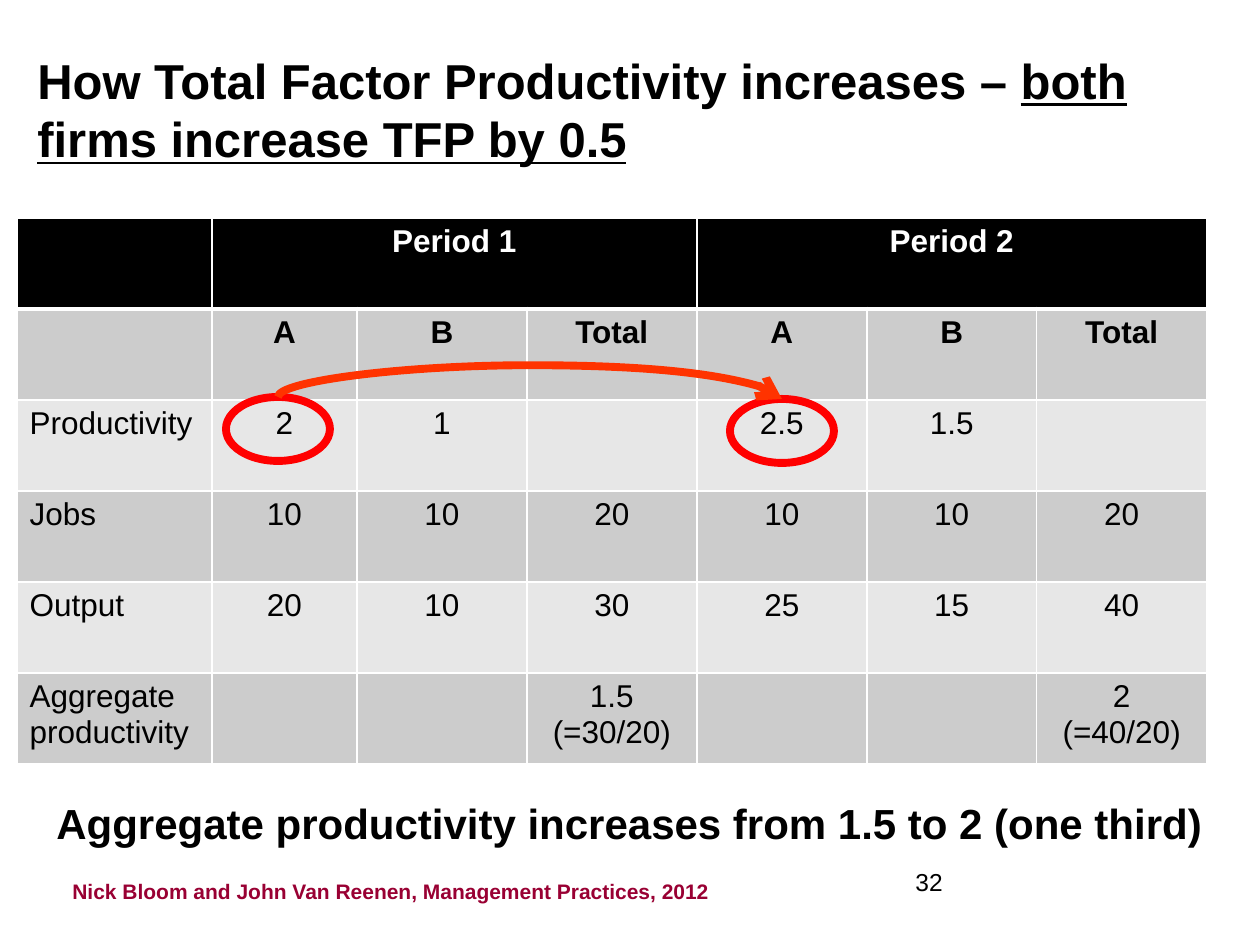
from dataclasses import dataclass

from lxml import etree
from pptx import Presentation
from pptx import util as u
from pptx.dml.color import RGBColor
from pptx.enum import shapes, text
from pptx.oxml.ns import qn

PX = u.Inches(1) // 126


@dataclass(frozen=True)
class Theme:
    font: str = "Arial"
    black: str = "000000"
    white: str = "FFFFFF"
    dark_band: str = "CCCCCC"
    light_band: str = "E7E7E7"
    footer: str = "990033"
    ring: str = "FF0000"
    arrow: str = "FF3300"
    title_size: int = 28
    conclusion_size: int = 24
    table_size: int = 18
    number_size: int = 14
    footer_size: int = 12
    accent_width: float = 4.5


THEME = Theme()

COLUMN_WIDTHS = [195, 145] + [170] * 5
ROW_HEIGHT = 91
ROWS = [
    ["", "Period 1", "", "", "Period 2", "", ""],
    ["", "A", "B", "Total", "A", "B", "Total"],
    ["Productivity", "2", "1", "", "2.5", "1.5", ""],
    ["Jobs", "10", "10", "20", "10", "10", "20"],
    ["Output", "20", "10", "30", "25", "15", "40"],
    ["Aggregate productivity", "", "", "1.5 (=30/20)", "", "", "2\n(=40/20)"],
]


def px(*lengths):
    return [u.Emu(length * PX) for length in lengths]


def rgb(color):
    return RGBColor.from_string(color)


def set_font(paragraph, size, color, bold=False):
    font = paragraph.font
    font.name, font.size, font.bold = THEME.font, u.Pt(size), bold
    font.color.rgb = rgb(color)


def add_text(slide, box, runs, size, color=THEME.black, bold=True, wrap=True):
    """Add one paragraph of (wording, underlined) runs; unwrapped boxes fit their text."""
    shape = slide.shapes.add_textbox(*px(*box))
    frame = shape.text_frame
    frame.word_wrap = wrap
    if not wrap:
        frame.auto_size = text.MSO_AUTO_SIZE.SHAPE_TO_FIT_TEXT
    paragraph = frame.paragraphs[0]
    set_font(paragraph, size, color, bold)
    for wording, underlined in runs:
        run = paragraph.add_run()
        run.text = wording
        if underlined:
            run.font.underline = True
    return shape


def set_borders(cell, bottom_width):
    properties = cell._tc.get_or_add_tcPr()
    widths = {"a:lnL": 1, "a:lnR": 1, "a:lnT": 1, "a:lnB": bottom_width}
    for index, (tag, width) in enumerate(widths.items()):
        line = etree.Element(qn(tag), w=str(u.Pt(width)))
        fill = etree.SubElement(line, qn("a:solidFill"))
        etree.SubElement(fill, qn("a:srgbClr"), val=THEME.white)
        properties.insert(index, line)


def style_cell(cell, row, column):
    header = row == 0
    band = THEME.light_band if row % 2 == 0 else THEME.dark_band
    cell.fill.solid()
    cell.fill.fore_color.rgb = rgb(THEME.black if header else band)
    set_borders(cell, 3 if header else 1)
    for paragraph in cell.text_frame.paragraphs:
        paragraph.alignment = text.PP_ALIGN.CENTER if column else text.PP_ALIGN.LEFT
        set_font(paragraph, THEME.table_size, THEME.white if header else THEME.black, row < 2)


def add_productivity_table(slide, left, top):
    size = px(left, top, sum(COLUMN_WIDTHS), ROW_HEIGHT * len(ROWS))
    table = slide.shapes.add_table(len(ROWS), len(COLUMN_WIDTHS), *size).table
    table.first_row = table.horz_banding = False
    for column, width in zip(table.columns, px(*COLUMN_WIDTHS)):
        column.width = width
    for row, values in enumerate(ROWS):
        table.rows[row].height = px(ROW_HEIGHT)[0]
        for column, value in enumerate(values):
            cell = table.cell(row, column)
            cell.text = value
            style_cell(cell, row, column)
    for first in (1, 4):
        table.cell(0, first).merge(table.cell(0, first + 2))


def add_ring(slide, left, top, width, height):
    ring = slide.shapes.add_shape(shapes.MSO_SHAPE.OVAL, *px(left, top, width, height))
    ring.shadow.inherit = False
    ring.fill.background()
    ring.line.color.rgb = rgb(THEME.ring)
    ring.line.width = u.Pt(THEME.accent_width)


def add_arched_arrow(slide, start, end, rise):
    """Draw a curve that rises from start and drops to end, which lies lower on the right."""
    (start_x, start_y), (end_x, end_y) = start, end
    span, drop = end_x - start_x, end_y - start_y
    left = (start_x + end_x - drop) // 2
    top = (start_y + end_y - span) // 2
    # The connector is laid out upright, then turned a quarter to the left.
    connector = slide.shapes.add_connector(
        shapes.MSO_CONNECTOR.CURVE, *px(left + drop, top, left, top + span))
    connector.line.color.rgb = rgb(THEME.arrow)
    connector.line.width = u.Pt(THEME.accent_width)
    properties = connector.element.spPr
    properties.find(qn("a:xfrm")).set("rot", str(270 * 60000))
    guides = properties.find(qn("a:prstGeom")).find(qn("a:avLst"))
    etree.SubElement(guides, qn("a:gd"), name="adj1", fmla=f"val {-rise * 100000 // drop}")
    etree.SubElement(properties.find(qn("a:ln")), qn("a:tailEnd"), type="arrow")
    etree.SubElement(properties, qn("a:effectLst"))


def main():
    presentation = Presentation()
    presentation.slide_width, presentation.slide_height = px(1260, 945)
    slide = presentation.slides.add_slide(presentation.slide_layouts[6])

    add_text(slide, (60, 872, 668, 38),
             [("Nick Bloom and John Van Reenen, Management Practices, 2012", False)],
             THEME.footer_size, THEME.footer, wrap=False)
    title = add_text(slide, (25, 38, 1172, 157),
                     [("How Total Factor Productivity increases – ", False),
                      ("both firms increase TFP by 0.5", True)], THEME.title_size)
    title.text_frame.margin_top = px(12)[0]
    add_productivity_table(slide, 17, 218)
    add_text(slide, (903, 861, 262, 63), [("32", False)], THEME.number_size, bold=False)
    add_text(slide, (44, 791, 1182, 63),
             [("Aggregate productivity increases from 1.5 to 2 (one third)", False)],
             THEME.conclusion_size, wrap=False)

    ring_width, ring_height = 104, 64
    ring_corners = [(226, 397), (730, 399)]
    for left, top in ring_corners:
        add_ring(slide, left, top, ring_width, ring_height)
    start, end = [(left + ring_width // 2, top) for left, top in ring_corners]
    add_arched_arrow(slide, start, end, rise=32)

    presentation.save("out.pptx")


if __name__ == "__main__":
    main()
